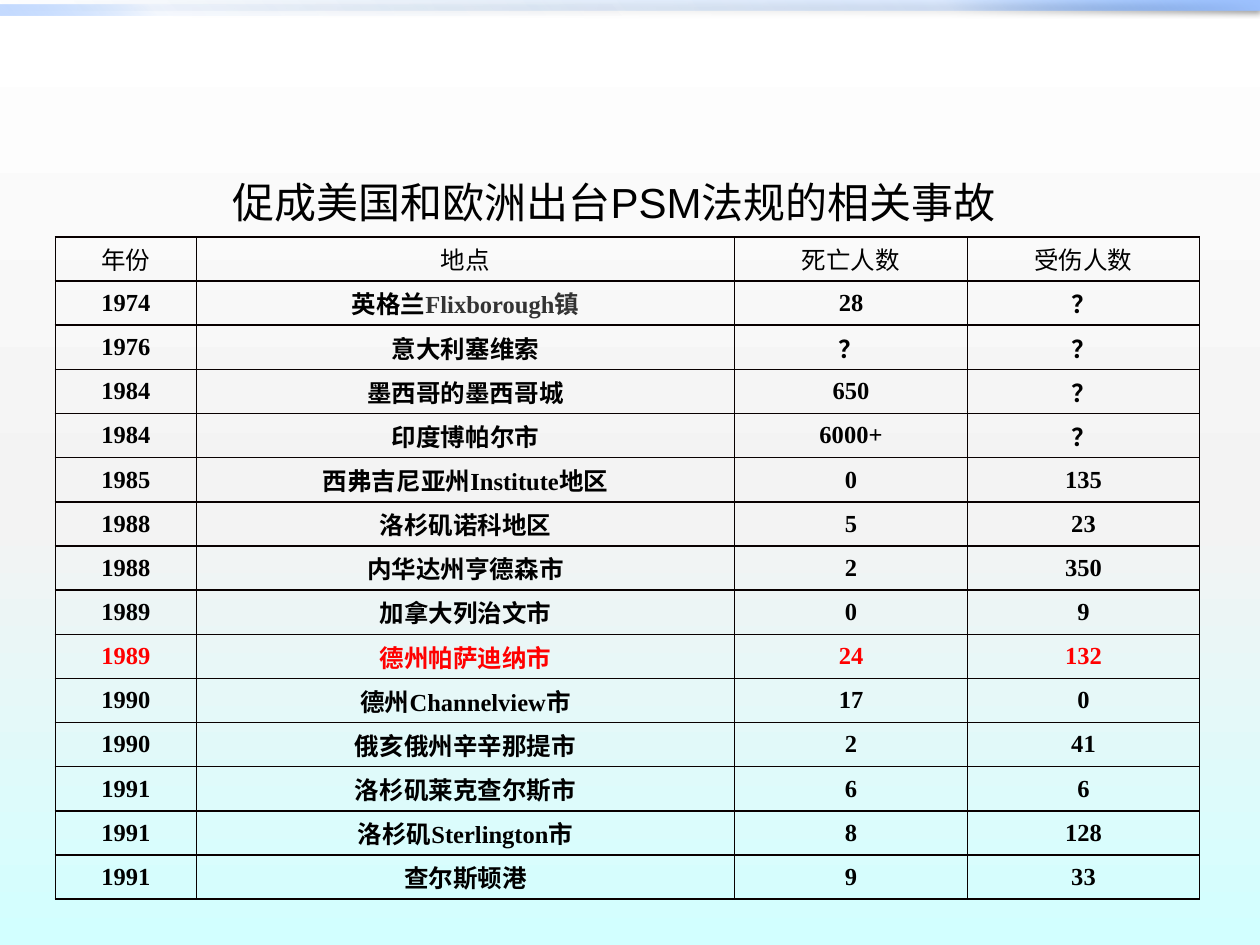
from pptx import Presentation
from pptx.dml.color import RGBColor
from pptx.enum.shapes import MSO_SHAPE
from pptx.enum.text import MSO_ANCHOR, MSO_AUTO_SIZE, PP_ALIGN
from pptx.oxml import parse_xml
from pptx.oxml.ns import nsdecls, qn
from pptx.util import Inches, Pt

INK, GREY, RED, LINE = "000000", "333333", "FF0000", "080000"
HEAD = ["年份", "地点", "死亡人数", "受伤人数"]
COLS = [11.2, 42.7, 18.5, 18.4]  # percent of slide width
ROWS = [
    ("1974", "英格兰|Flixborough镇", "28", "？"),
    ("1976", "意大利塞维索", "？", "？"),
    ("1984", "墨西哥的墨西哥城", "650", "？"),
    ("1984", "印度博帕尔市", "6000+", "？"),
    ("1985", "西弗吉尼亚州Institute地区", "0", "135"),
    ("1988", "洛杉矶诺科地区", "5", "23"),
    ("1988", "内华达州亨德森市", "2", "350"),
    ("1989", "加拿大列治文市", "0", "9"),
    ("1989", "德州帕萨迪纳市", "24", "132"),
    ("1990", "德州Channelview市", "17", "0"),
    ("1990", "俄亥俄州辛辛那提市", "2", "41"),
    ("1991", "洛杉矶莱克查尔斯市", "6", "6"),
    ("1991", "洛杉矶Sterlington市", "8", "128"),
    ("1991", "查尔斯顿港", "9", "33"),
]
KEY = 9  # table row shown in red


def color(code):
    return RGBColor.from_string(code)


def node(tag, attrs="", inner=""):
    return f"<a:{tag} {nsdecls('a')} {attrs}>{inner}</a:{tag}>"


def tint(code, alpha=100):
    return node("srgbClr", f'val="{code}"', node("alpha", f'val="{alpha * 1000}"'))


class Page:
    """Style and current slide; lengths are percent of the slide's size."""

    def __init__(self, deck):
        self.wide, self.high = deck.slide_width, deck.slide_height
        self.slide = deck.slides.add_slide(deck.slide_layouts[6])

    def box(self, left, top, width, height):
        return (self.x(left), self.y(top), self.x(width), self.y(height))

    def x(self, share):
        return round(self.wide * share / 100)

    def y(self, share):
        return round(self.high * share / 100)

    def blend(self, owner, fill, stops, angle):
        """Give a fill any number of stops: (position, colour, opacity)."""
        fill.gradient()
        grad = owner.find(".//" + qn("a:gradFill"))
        marks = "".join(node("gs", f'pos="{pos * 1000}"', tint(code, alpha))
                        for pos, code, alpha in stops)
        grad.replace(grad.find(qn("a:gsLst")), parse_xml(node("gsLst", "", marks)))
        grad.find(qn("a:lin")).set("ang", str(angle * 60000))

    def back(self, stops, angle):
        self.blend(self.slide.element, self.slide.background.fill, stops, angle)

    def bar(self, place, stops, angle, shade=False):
        shape = self.slide.shapes.add_shape(MSO_SHAPE.RECTANGLE, *self.box(*place))
        self.blend(shape.element, shape.fill, stops, angle)
        shape.line.fill.background()
        shape.shadow.inherit = False
        if shade:
            attrs = (f'blurRad="{Pt(3.1)}" dist="{Pt(1.6)}" dir="5400000" '
                     'algn="t" rotWithShape="0"')
            effects = shape.element.find(".//" + qn("a:effectLst"))
            effects.append(parse_xml(node("outerShdw", attrs, tint(INK, 38))))

    def label(self, frame, runs, size, face, bold=False):
        para = frame.paragraphs[0]
        para.alignment = PP_ALIGN.CENTER
        for text, ink in runs:
            run = para.add_run()
            run.text = text
            font = run.font
            font.size, font.name, font.bold = Pt(size), face, bold
            font.color.rgb = color(ink)

    def title(self, place, text):
        frame = self.slide.shapes.add_textbox(*self.box(*place)).text_frame
        frame.word_wrap = True
        frame.auto_size = MSO_AUTO_SIZE.SHAPE_TO_FIT_TEXT
        self.label(frame, [(text, INK)], 24, "Arial")

    def edge(self, cell):
        props = cell._tc.get_or_add_tcPr()
        paint = node("solidFill", "", tint(LINE))
        for spot, side in enumerate("LRTB"):
            props.insert(spot, parse_xml(node("ln" + side, f'w="{Pt(1)}"', paint)))

    def table(self, place, cols, rows):
        spot = self.box(*place)
        grid = self.slide.shapes.add_table(len(rows), len(cols), *spot).table
        grid.first_row = grid.horz_banding = False
        for col, share in zip(grid.columns, cols):
            col.width = self.x(share)
        for r, row in enumerate(rows):
            grid.rows[r].height = spot[3] // len(rows)
            for c, text in enumerate(row):
                cell = grid.cell(r, c)
                cell.vertical_anchor = MSO_ANCHOR.MIDDLE
                cell.margin_left = cell.margin_right = Inches(0.07)
                cell.margin_top = cell.margin_bottom = 0
                cell.fill.background()
                self.edge(cell)
                # A bar splits the text into a main run and a grey run
                inks = (RED if r == KEY else INK, GREY)
                runs = zip(text.split("|"), inks)
                self.label(cell.text_frame, runs, 14, "Times New Roman", r > 0)


def main():
    deck = Presentation()
    deck.slide_width, deck.slide_height = Inches(10), Inches(7.5)
    page = Page(deck)

    # Background and top bars
    page.back([(0, "FFFFFF", 100), (55, "F3F3F3", 100), (100, "D2FFFF", 100)], 90)
    page.bar((0, 0, 100, 1.07),
             [(0, "0058B7", 0), (75, "4F95FF", 20), (100, "9EC2FF", 100)], 315, True)
    page.bar((0, 0.53, 50, 1.07),
             [(0, "0058B7", 0), (75, "4F95FF", 5), (100, "9EC2FF", 60)], 135)

    # Title and accident table
    page.title((5.1, 18, 87.3, 6.67), "促成美国和欧洲出台PSM法规的相关事故")
    page.table((4.4, 25.07, 90.8, 70.13), COLS, [HEAD, *ROWS])
    deck.save("out.pptx")


if __name__ == "__main__":
    main()
